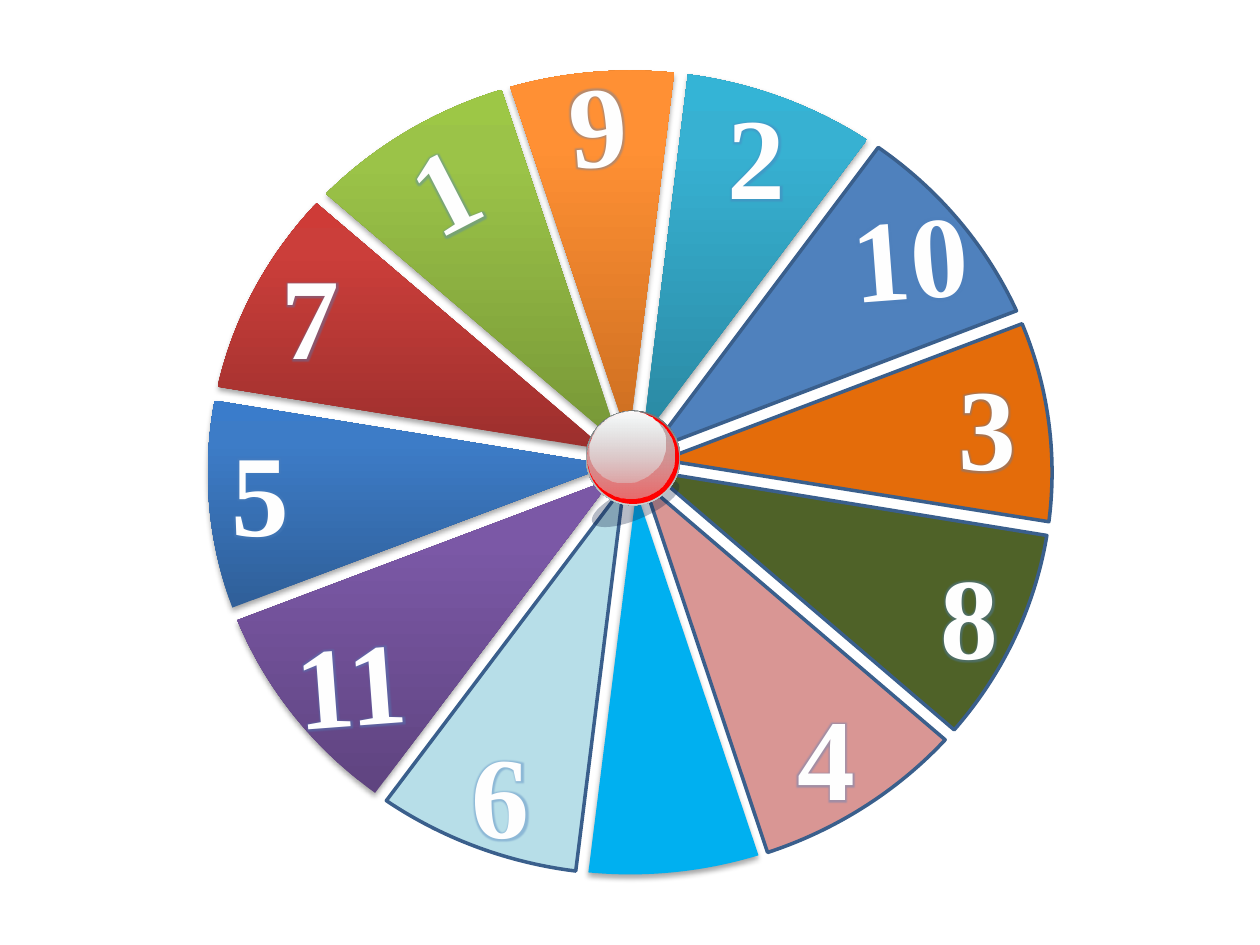
import itertools
import math
from dataclasses import dataclass

import pptx
import pptx.dml.color
import pptx.enum.shapes
import pptx.enum.text
import pptx.oxml
import pptx.oxml.ns
import pptx.util
from pptx.util import Inches

qn = pptx.oxml.ns.qn


@dataclass(frozen=True)
class Theme:
    font: str = "Times New Roman"
    size: int = 66
    text: str = "FEFEFE"
    halo: str = "4F81BD"
    edge: str = "3A5F8C"
    red: str = "FF0000"
    shade: str = "0F2145"
    pale: str = "D6E1E2"


THEME = Theme()

# Wheel rim: centre and radii
MID_X, MID_Y = 5, 3.75
RAD_X, RAD_Y = 3.35, 3.19

# Tip, first and last rim corner (clockwise), fill; three colours make a gradient
WEDGES = [
    ((4.99, 3.49), (4.05, 0.69), (5.35, 0.58), ("CC6E20", "FF9034", "FF9136")),
    ((5.1, 3.48), (5.46, 0.59), (6.88, 1.11), ("2A88A2", "37B1D2", "34B4D6")),
    ((4.92, 3.53), (2.59, 1.54), (3.98, 0.71), ("779737", "9BC348", "9DC746")),
    ((5.17, 3.57), (6.97, 1.17), (8.06, 2.47), "4F81BD"),
    ((4.81, 3.57), (1.73, 3.07), (2.52, 1.62), ("9C2F2D", "CB3E3A", "CE3B37")),
    ((5.26, 3.65), (8.11, 2.57), (8.32, 4.14), "E46C0A"),
    ((4.85, 3.69), (1.85, 4.82), (1.71, 3.18), ("2F5F99", "3D7CC7", "3A7CCB")),
    ((5.17, 3.74), (8.31, 4.25), (7.57, 5.79), "4F6228"),
    ((4.86, 3.8), (2.98, 6.29), (1.89, 4.92), ("5F4480", "7B58A6", "7C57A8")),
    ((5.11, 3.83), (7.5, 5.87), (6.09, 6.76), "D99694"),
    ((4.95, 3.86), (4.57, 6.91), (3.07, 6.35), "B7DEE8"),
    ((5.05, 3.9), (6.02, 6.79), (4.67, 6.92), "00B0F0"),
]
PLAIN = "00B0F0"  # the one solid wedge without an edge

# Text, left, top, width, turn
LOWER = [
    ("2", 5.67, 0.62, 0.67, 0),
    ("6", 3.64, 5.69, 0.67, 0),
    ("1", 3.18, 0.88, 0.67, 332.5),
    ("3", 7.5, 2.77, 0.67, 0),
    ("5", 1.73, 3.29, 0.67, 0),
    ("7", 2.13, 1.89, 0.67, 0),
]
UPPER = [
    ("4", 6.22, 5.39, 0.67, 0),
    ("8", 7.36, 4.27, 0.67, 0),
    ("10", 6.65, 1.41, 1.14, 355.7),
    ("11", 2.24, 4.8, 1.09, 355.7),
    ("9", 4.41, 0.36, 0.67, 355.7),
]

# Left, top, width, height, stops (position, colour, opacity)
DISCS = [
    (4.67, 3.87, 0.75, 0.25, [(0, THEME.shade, 30)]),
    (4.65, 3.26, 0.75, 0.75, [(0, "636869", 100), (100, THEME.pale, 100)]),
    (4.66, 3.27, 0.73, 0.73, [(0, THEME.red, 100)]),
    (4.66, 3.28, 0.69, 0.68, [(0, "AAB2B3", 100), (100, THEME.pale, 48)]),
    (4.67, 3.27, 0.62, 0.55, [(0, "FFFFFF", 100), (100, THEME.pale, 38)]),
]
HUB_TURN = 336.5


def rgb(code):
    return pptx.dml.color.RGBColor.from_string(code)


def add_node(root, tag, **attrs):
    node = pptx.oxml.parse_xml(f'<{tag} {pptx.oxml.ns.nsdecls("a")}/>')
    for key, value in attrs.items():
        node.set(key, str(value))
    root.append(node)
    return node


def add_color(root, code, alpha=100):
    node = add_node(root, "a:srgbClr", val=code)
    if alpha < 100:
        add_node(node, "a:alpha", val=alpha * 1000)


def paint(shape, stops, angle):
    """Fill with one colour, or with a gradient when there are more stops."""
    if len(stops) == 1:
        _, code, alpha = stops[0]
        shape.fill.solid()
        shape.fill.fore_color.rgb = rgb(code)
        if alpha < 100:
            node = shape._element.spPr.find(qn("a:solidFill"))[0]
            add_node(node, "a:alpha", val=alpha * 1000)
        return
    shape.fill.gradient()
    shape.fill.gradient_angle = angle
    grad = shape._element.spPr.find(qn("a:gradFill"))
    grad.set("rotWithShape", "0")
    root = grad.find(qn("a:gsLst"))
    for node in list(root):
        root.remove(node)
    for place, code, alpha in stops:
        add_color(add_node(root, "a:gs", pos=place * 1000), code, alpha)


def add_drop(shape):
    root = shape._element.spPr.find(qn("a:effectLst"))
    drop = add_node(root, "a:outerShdw", blurRad=40000, dist=23000,
                    dir=5400000, rotWithShape=0)
    add_color(drop, "000000", 35)


def rim_turns(first, last):
    """Angles of both corners and of any rim extreme between them."""
    begin, end = (math.atan2((y - MID_Y) / RAD_Y, (x - MID_X) / RAD_X)
                  for x, y in (first, last))
    end = begin + (end - begin) % math.tau
    quarter = math.pi / 2
    peaks = range(math.ceil(begin / quarter), math.floor(end / quarter) + 1)
    return [begin, *(k * quarter for k in peaks), end]


def rim_point(turn, pull=0):
    """Point on the rim, moved along its tangent by pull."""
    x = math.cos(turn) - pull * math.sin(turn)
    y = math.sin(turn) + pull * math.cos(turn)
    return Inches(MID_X + RAD_X * x), Inches(MID_Y + RAD_Y * y)


def bend(shape, turns):
    """Turn the rim lines of a wedge into curves."""
    lines = list(shape._element.spPr.iter(qn("a:lnTo")))[1:len(turns)]
    for line, (start, stop) in zip(lines, itertools.pairwise(turns)):
        pull = 4 / 3 * math.tan((stop - start) / 4)
        curve = add_node(line.getparent(), "a:cubicBezTo")
        line.getparent().replace(line, curve)
        for x, y in (rim_point(start, pull), rim_point(stop, -pull),
                     rim_point(stop)):
            add_node(curve, "a:pt", x=x - shape.left, y=y - shape.top)


def add_wedge(slide, tip, first, last, fill):
    turns = rim_turns(first, last)
    pen = slide.shapes.build_freeform(Inches(tip[0]), Inches(tip[1]))
    pen.add_line_segments([rim_point(turn) for turn in turns])
    shape = pen.convert_to_shape()
    bend(shape, turns)
    shape.shadow.inherit = False
    solid = isinstance(fill, str)
    stops = [(0, fill, 100)] if solid else [
        (place, code, 100) for place, code in zip((0, 80, 100), fill)]
    paint(shape, stops, 90)
    if solid and fill != PLAIN:
        shape.line.color.rgb = rgb(THEME.edge)
        shape.line.width = pptx.util.Pt(2)
    else:
        shape.line.fill.background()
        add_drop(shape)


def add_label(slide, text, left, top, width, turn):
    box = slide.shapes.add_textbox(Inches(left), Inches(top),
                                   Inches(width), Inches(1.21))
    box.rotation = turn
    frame = box.text_frame
    frame.text = text
    frame.word_wrap = False
    frame.auto_size = pptx.enum.text.MSO_AUTO_SIZE.SHAPE_TO_FIT_TEXT
    para = frame.paragraphs[0]
    para.alignment = pptx.enum.text.PP_ALIGN.CENTER
    run = para.runs[0]
    font = run.font
    font.name, font.size, font.bold = THEME.font, pptx.util.Pt(THEME.size), True
    font.color.rgb = rgb(THEME.text)
    # Letter spacing, thin outline and soft glow
    props = run._r.get_or_add_rPr()
    props.set("spc", "50")
    line = add_node(props, "a:ln", w=9525)
    add_color(add_node(line, "a:solidFill"), THEME.halo)
    props.insert(0, line)
    glow = add_node(add_node(props, "a:effectLst"), "a:glow", rad=38100)
    add_color(glow, THEME.halo, 40)
    props.find(qn("a:solidFill")).addnext(glow.getparent())


def add_hub(slide):
    group = slide.shapes.add_group_shape()
    for left, top, width, height, stops in DISCS:
        disc = group.shapes.add_shape(
            pptx.enum.shapes.MSO_SHAPE.OVAL, Inches(left), Inches(top),
            Inches(width), Inches(height))
        disc.rotation = HUB_TURN
        disc.shadow.inherit = False
        disc.line.fill.background()
        paint(disc, stops, 270)


def main():
    deck = pptx.Presentation()
    deck.slide_width, deck.slide_height = Inches(10), Inches(7.5)
    slide = deck.slides.add_slide(deck.slide_layouts[6])
    # Wheel
    for wedge in WEDGES:
        add_wedge(slide, *wedge)
    # Numbers below and above the hub
    for label in LOWER:
        add_label(slide, *label)
    add_hub(slide)
    for label in UPPER:
        add_label(slide, *label)
    deck.save("out.pptx")


if __name__ == "__main__":
    main()
